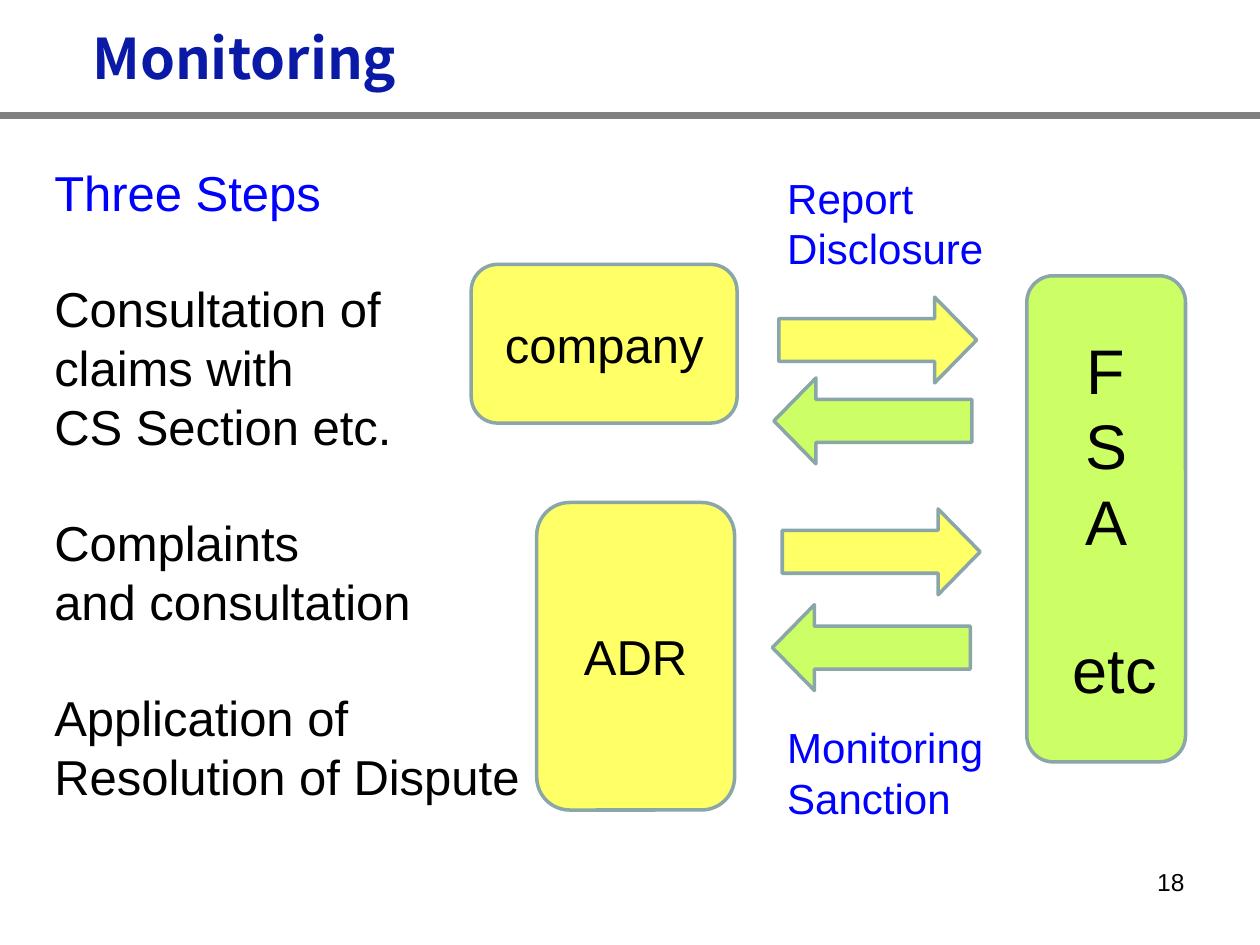
from lxml import etree
from pptx import Presentation
from pptx.dml.color import RGBColor
from pptx.enum.shapes import MSO_CONNECTOR, MSO_SHAPE
from pptx.enum.text import MSO_ANCHOR, MSO_AUTO_SIZE, PP_ALIGN
from pptx.oxml.ns import qn
from pptx.util import Cm, Pt

LEFT, CENTER, RIGHT = PP_ALIGN.LEFT, PP_ALIGN.CENTER, PP_ALIGN.RIGHT
TOP, MIDDLE = MSO_ANCHOR.TOP, MSO_ANCHOR.MIDDLE
ROUNDED, ARROW = MSO_SHAPE.ROUNDED_RECTANGLE, MSO_SHAPE.RIGHT_ARROW
STRAIGHT = MSO_CONNECTOR.STRAIGHT
NO_AUTOFIT = MSO_AUTO_SIZE.NONE

BLACK, BLUE, NAVY, GREY = "000000", "0000FF", "0A19A6", "808080"
YELLOW, GREEN, OUTLINE = "FFFF66", "CCFF66", "8AA6A8"

TITLE = "Monitoring"
STEP_GROUPS = [
    ["Three Steps"],
    ["Consultation of", "claims with", "CS Section etc."],
    ["Complaints", "and consultation"],
    ["Application of", "Resolution of Dispute"],
]
FIRST_GAP, LINE_GAP, GROUP_GAP = 2.6, 6.8, 39.4
ETC_GAP = 41.4

BOXES = [
    (["F", "S", "A", " etc"], 36, GREEN, (20.7, 5.56, 3.2, 9.8)),
    (["company"], 28, YELLOW, (9.5, 5.33, 5.36, 3.2)),
    (["ADR"], 28, YELLOW, (10.82, 10.13, 3.99, 6.2)),
]
LABELS = [
    (["Report", "Disclosure"], 24, BLUE, LEFT, (15.62, 3.35, 4.65, 2.31)),
    (["Monitoring", "Sanction"], 24, BLUE, LEFT, (15.62, 14.43, 4.65, 2.31)),
    (["18"], 14, BLACK, RIGHT, (18.21, 17.35, 5.92, 1.32)),
]
ARROW_SIZE = (3.99, 1.73)
ARROWS = [
    (15.7, 5.99, YELLOW, 0),
    (15.6, 7.62, GREEN, 180),
    (15.77, 10.26, YELLOW, 0),
    (15.57, 12.19, GREEN, 180),
]


def color(hex_string):
    return RGBColor.from_string(hex_string)


def place(shape, area):
    shape.left, shape.top, shape.width, shape.height = map(Cm, area)


def write(shape, lines, size, hex_color, align, anchor=TOP, font="Arial", bold=False):
    frame = shape.text_frame
    frame.text = "\n".join(lines)
    frame.word_wrap = True
    frame.auto_size = NO_AUTOFIT
    frame.vertical_anchor = anchor
    for paragraph in frame.paragraphs:
        paragraph.alignment = align
        paragraph.font.name = font
        paragraph.font.size = Pt(size)
        paragraph.font.bold = bold
        paragraph.font.color.rgb = color(hex_color)
    return frame


def add_filled(slide, kind, area, fill):
    shape = slide.shapes.add_shape(kind, *map(Cm, area))
    shape.shadow.inherit = False
    shape.fill.solid()
    shape.fill.fore_color.rgb = color(fill)
    shape.line.color.rgb = color(OUTLINE)
    shape.line.width = Pt(2)
    return shape


def add_title(slide):
    title = slide.shapes.title
    place(title, (0.3, 0.33, 25.1, 1.63))
    frame = write(title, [TITLE], 32, NAVY, LEFT, MIDDLE, "Noto Sans CJK JP", True)
    frame.margin_left = Cm(1.56)


def add_steps(slide):
    body = slide.placeholders[1]
    place(body, (0.84, 3.38, 23.7, 15.54))
    lines = [line for group in STEP_GROUPS for line in group]
    gaps = [LINE_GAP if index else GROUP_GAP
            for group in STEP_GROUPS for index in range(len(group))]
    gaps[0] = FIRST_GAP
    frame = write(body, lines, 28, BLACK, LEFT)
    for paragraph, gap in zip(frame.paragraphs, gaps):
        paragraph.line_spacing = 0.8
        paragraph.space_before = Pt(gap)
        properties = paragraph._p.get_or_add_pPr()
        properties.set("marL", "0")
        properties.set("indent", "0")
        bullet = etree.Element(qn("a:buNone"))
        properties.insert_element_before(bullet, "a:tabLst", "a:defRPr", "a:extLst")
    frame.paragraphs[0].font.color.rgb = color(BLUE)


def add_rule(slide, width):
    rule = slide.shapes.add_connector(STRAIGHT, 0, Cm(2.33), width, Cm(2.33))
    rule.line.color.rgb = color(GREY)
    rule.line.width = Pt(4)
    etree.SubElement(rule._element.spPr, qn("a:effectLst"))


def main():
    """Build the monitoring slide and save it."""
    presentation = Presentation()
    presentation.slide_width, presentation.slide_height = Cm(25.4), Cm(19.05)
    slide = presentation.slides.add_slide(presentation.slide_layouts[1])
    add_title(slide)
    add_steps(slide)
    add_rule(slide, presentation.slide_width)

    for lines, size, fill, area in BOXES:
        box = add_filled(slide, ROUNDED, area, fill)
        frame = write(box, lines, size, BLACK, CENTER, MIDDLE)
        if len(lines) > 1:
            frame.paragraphs[-1].space_before = Pt(ETC_GAP)

    for lines, size, hex_color, align, area in LABELS:
        label = slide.shapes.add_textbox(*map(Cm, area))
        write(label, lines, size, hex_color, align)

    for left, top, fill, rotation in ARROWS:
        arrow = add_filled(slide, ARROW, (left, top, *ARROW_SIZE), fill)
        arrow.adjustments[1] = 0.49
        arrow.rotation = rotation

    presentation.save("out.pptx")


if __name__ == "__main__":
    main()
